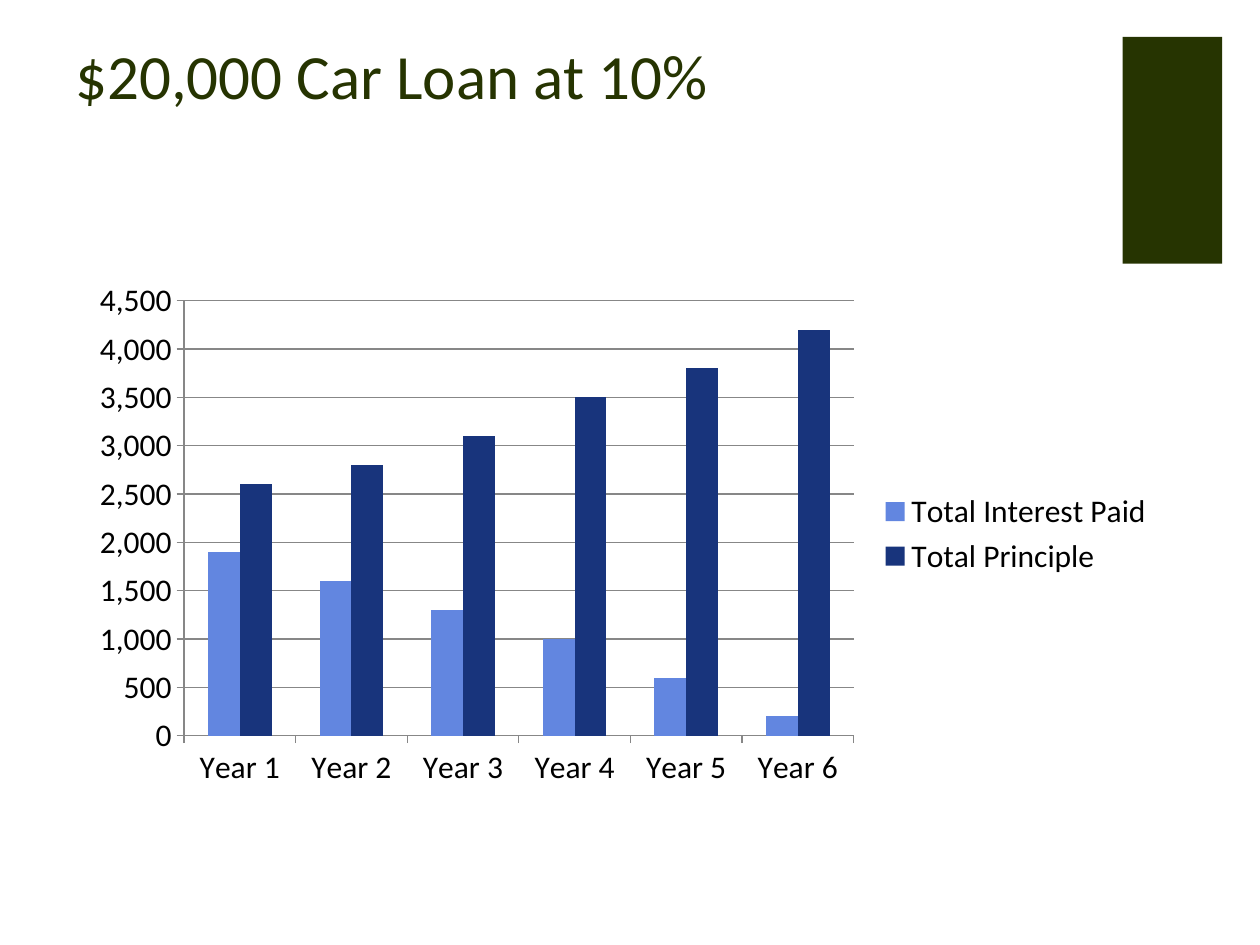
from dataclasses import dataclass
from pptx import Presentation
from pptx.chart.data import CategoryChartData
from pptx.dml.color import RGBColor
from pptx.enum.chart import XL_CHART_TYPE, XL_LEGEND_POSITION, XL_TICK_MARK
from pptx.enum.shapes import MSO_SHAPE
from pptx.enum.text import MSO_ANCHOR
from pptx.util import Inches, Pt


@dataclass(frozen=True)
class Theme:
    font: str = "Calibri"
    title: Pt = Pt(36)
    label: Pt = Pt(18)
    rule: Pt = Pt(0.75)
    dark: RGBColor = RGBColor(0x26, 0x34, 0x01)
    text: RGBColor = RGBColor(0, 0, 0)
    grid: RGBColor = RGBColor(0x87, 0x87, 0x87)
    bars: tuple = (RGBColor(0x62, 0x86, 0xE0), RGBColor(0x18, 0x34, 0x7C))


THEME = Theme()
WIDTH, HEIGHT = 10, 7.5
YEARS = [f"Year {n}" for n in range(1, 7)]
LOAN = {
    "Total Interest Paid": (1900, 1600, 1300, 1000, 600, 200),
    "Total Principle": (2600, 2800, 3100, 3500, 3800, 4200),
}


def place(left, top, width, height):
    return [Inches(share * side / 100) for share, side in
            zip((left, top, width, height), (WIDTH, HEIGHT) * 2)]


def style(font, size, color):
    font.name = THEME.font
    font.size = size
    font.color.rgb = color


def add_block(slide, box):
    block = slide.shapes.add_shape(MSO_SHAPE.RECTANGLE, *box)
    block.shadow.inherit = False
    block.fill.solid()
    block.fill.fore_color.rgb = THEME.dark
    block.line.fill.background()


def add_title(slide, box, text):
    frame = slide.shapes.add_textbox(*box).text_frame
    frame.word_wrap = True
    frame.vertical_anchor = MSO_ANCHOR.BOTTOM
    line = frame.paragraphs[0]
    line.text = text
    style(line.font, THEME.title, THEME.dark)


def rule(line):
    line.color.rgb = THEME.grid
    line.width = THEME.rule


def style_axis(axis, code):
    axis.major_tick_mark = XL_TICK_MARK.OUTSIDE
    axis.minor_tick_mark = XL_TICK_MARK.NONE
    axis.tick_labels.number_format = code
    axis.tick_labels.number_format_is_linked = False
    style(axis.tick_labels.font, THEME.label, THEME.text)
    rule(axis.format.line)


def add_bars(slide, box, names, table):
    data = CategoryChartData()
    data.categories = names
    for name, values in table.items():
        data.add_series(name, values)
    chart = slide.shapes.add_chart(
        XL_CHART_TYPE.COLUMN_CLUSTERED, *box, data).chart
    chart.has_title = False
    style(chart.font, THEME.label, THEME.text)

    plot = chart.plots[0]
    plot.vary_by_categories = False
    plot.gap_width = 150
    plot.overlap = 0
    for series, color in zip(plot.series, THEME.bars):
        series.format.fill.solid()
        series.format.fill.fore_color.rgb = color

    style_axis(chart.category_axis, "General")
    axis = chart.value_axis
    style_axis(axis, "#,##0")
    axis.minimum_scale, axis.maximum_scale, axis.major_unit = 0, 4500, 500
    axis.has_major_gridlines = True
    rule(axis.major_gridlines.format.line)

    chart.has_legend = True
    chart.legend.position = XL_LEGEND_POSITION.RIGHT
    chart.legend.include_in_layout = False
    style(chart.legend.font, THEME.label, THEME.text)


def main():
    deck = Presentation()
    deck.slide_width, deck.slide_height = Inches(WIDTH), Inches(HEIGHT)
    slide = deck.slides.add_slide(deck.slide_layouts[6])
    add_block(slide, place(89.1, 3.9, 7.9, 24))
    add_title(slide, place(5, 4.4, 71.2, 8.1), "$20,000 Car Loan at 10%")
    add_bars(slide, place(6.2, 28.7, 86.4, 55.6), YEARS, LOAN)
    deck.save("out.pptx")


if __name__ == "__main__":
    main()
